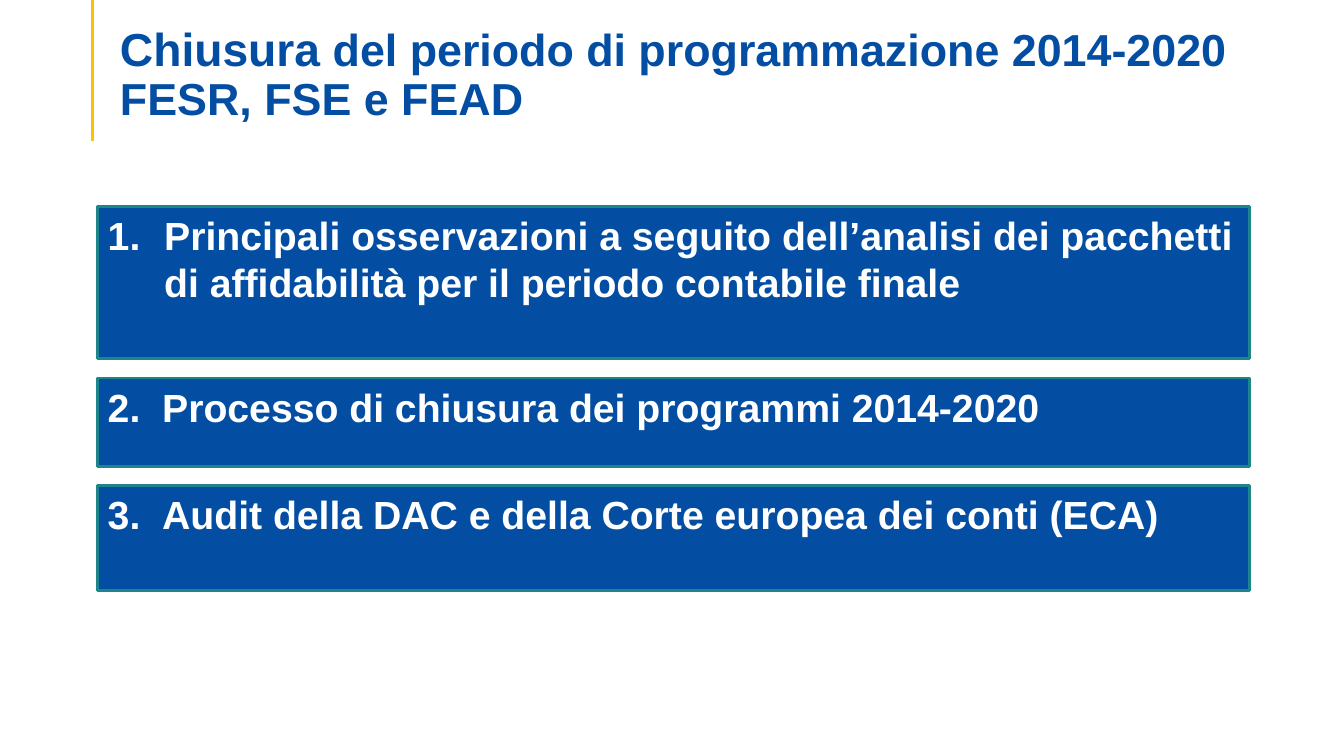
import pptx
import pptx.util
import pptx.dml.color
import pptx.enum.shapes
import pptx.enum.text
import pptx.oxml.xmlchemy
from lxml import etree
from dataclasses import dataclass

Inches = pptx.util.Inches
Pt = pptx.util.Pt


@dataclass(frozen=True)
class Theme:
    font: str = "Arial"
    blue: str = "034EA2"
    teal: str = "1E858B"
    gold: str = "FFC000"
    white: str = "FFFFFF"
    title_size: float = 32
    title_lead_size: float = 33
    item_size: float = 28
    rule_width: float = 2.25
    border_width: float = 2


def rgb(value):
    return pptx.dml.color.RGBColor.from_string(value)


def apply_format(target, values):
    for name, value in values.items():
        setattr(target, name, value)


class SlideBuilder:
    def __init__(self, presentation, theme):
        self.theme = theme
        # Layout 5 is title only
        self.slide = presentation.slides.add_slide(presentation.slide_layouts[5])

    def format_font(self, font, size, color):
        apply_format(font, {"name": self.theme.font, "size": Pt(size), "bold": True})
        font.color.rgb = rgb(color)

    def format_frame(self, frame, anchor, left_inset):
        apply_format(frame, {
            "word_wrap": True,
            "auto_size": pptx.enum.text.MSO_AUTO_SIZE.NONE,
            "vertical_anchor": anchor,
            "margin_left": Inches(left_inset),
            "margin_right": Inches(0.1),
            "margin_top": Inches(0.05),
            "margin_bottom": Inches(0.05),
        })

    def add_rule(self, x, top, bottom):
        rule = self.slide.shapes.add_connector(
            pptx.enum.shapes.MSO_CONNECTOR.STRAIGHT,
            Inches(x), Inches(top), Inches(x), Inches(bottom))
        rule.line.color.rgb = rgb(self.theme.gold)
        rule.line.width = Pt(self.theme.rule_width)
        properties = rule._element.spPr
        etree.SubElement(properties, pptx.oxml.ns.qn("a:effectLst"))

    def set_title(self, box, lead, rest, second_line):
        title = self.slide.shapes.title
        for name, value in zip(("left", "top", "width", "height"), box):
            setattr(title, name, Inches(value))
        self.format_frame(title.text_frame, pptx.enum.text.MSO_ANCHOR.BOTTOM, 0.22)
        paragraph = title.text_frame.paragraphs[0]
        apply_format(paragraph, {
            "alignment": pptx.enum.text.PP_ALIGN.LEFT, "line_spacing": 0.9})
        for text, size in ((lead, self.theme.title_lead_size),
                           (rest, self.theme.title_size)):
            run = paragraph.add_run()
            run.text = text
            self.format_font(run.font, size, self.theme.blue)
        paragraph.add_line_break()
        run = paragraph.add_run()
        run.text = second_line
        self.format_font(run.font, self.theme.title_size, self.theme.blue)

    def add_numbered_box(self, number, text, box, indent):
        shape = self.slide.shapes.add_shape(
            pptx.enum.shapes.MSO_SHAPE.RECTANGLE, *map(Inches, box))
        shape.shadow.inherit = False
        shape.fill.solid()
        shape.fill.fore_color.rgb = rgb(self.theme.blue)
        shape.line.color.rgb = rgb(self.theme.teal)
        shape.line.width = Pt(self.theme.border_width)
        self.format_frame(shape.text_frame, pptx.enum.text.MSO_ANCHOR.TOP, 0.1)

        # Automatic number with a hanging indent
        paragraph = shape.text_frame.paragraphs[0]
        paragraph.alignment = pptx.enum.text.PP_ALIGN.LEFT
        properties = paragraph._p.get_or_add_pPr()
        properties.set("marL", str(Inches(indent)))
        properties.set("indent", str(-Inches(indent)))
        etree.SubElement(properties, pptx.oxml.ns.qn("a:buAutoNum"),
                         type="arabicPeriod", startAt=str(number))
        run = paragraph.add_run()
        run.text = text
        self.format_font(run.font, self.theme.item_size, self.theme.white)


def main():
    presentation = pptx.Presentation()
    presentation.slide_width = Inches(13.33)
    presentation.slide_height = Inches(7.5)
    builder = SlideBuilder(presentation, Theme())

    # Heading with its vertical rule
    builder.add_rule(0.92, 0, 1.4)
    builder.set_title((0.97, 0.36, 12.36, 0.93), "Chiusura",
                      " del periodo di programmazione 2014-2020",
                      "FESR, FSE e FEAD")

    # Agenda boxes, stacked with an equal gap
    agenda = (
        ("Principali osservazioni a seguito dell’analisi dei pacchetti "
         "di affidabilità per il periodo contabile finale", 1.51, 0.56),
        ("Processo di chiusura dei programmi 2014-2020", 0.88, 0.54),
        ("Audit della DAC e della Corte europea dei conti (ECA)", 1.04, 0.54),
    )
    top, gap = 2.05, 0.19
    for number, (text, height, indent) in enumerate(agenda, start=1):
        builder.add_numbered_box(number, text, (0.97, top, 11.42, height), indent)
        top += height + gap

    presentation.save("out.pptx")


if __name__ == "__main__":
    main()
